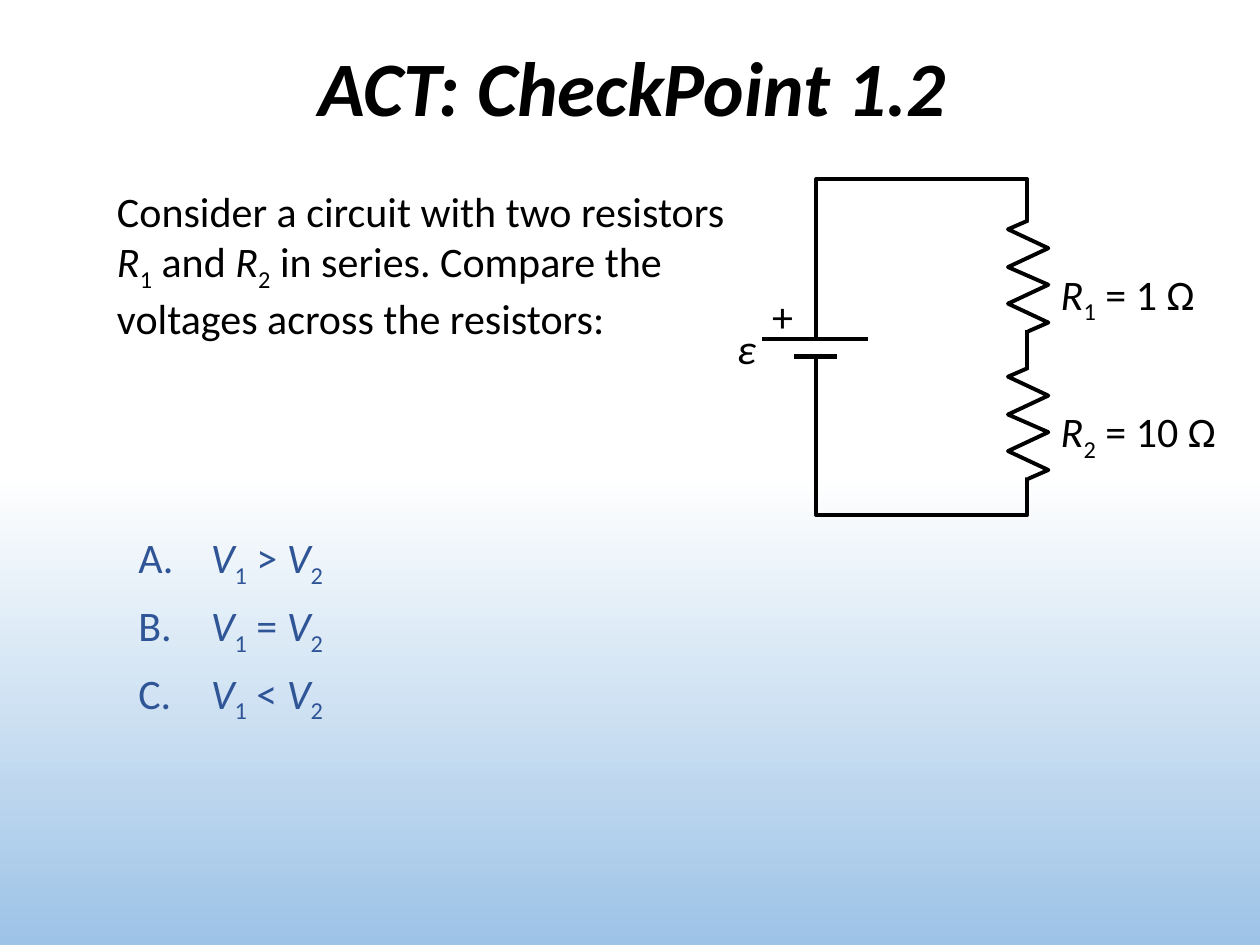
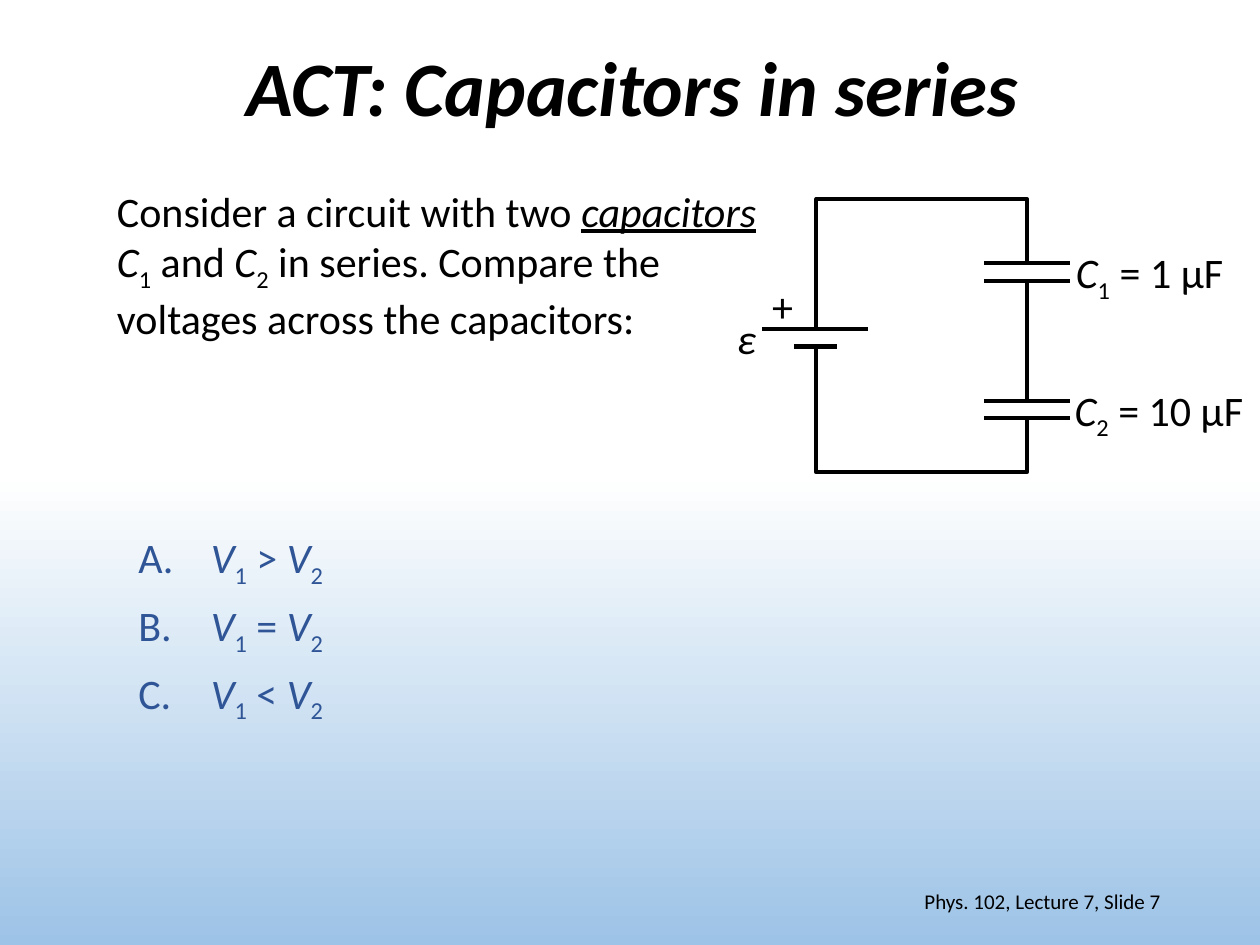
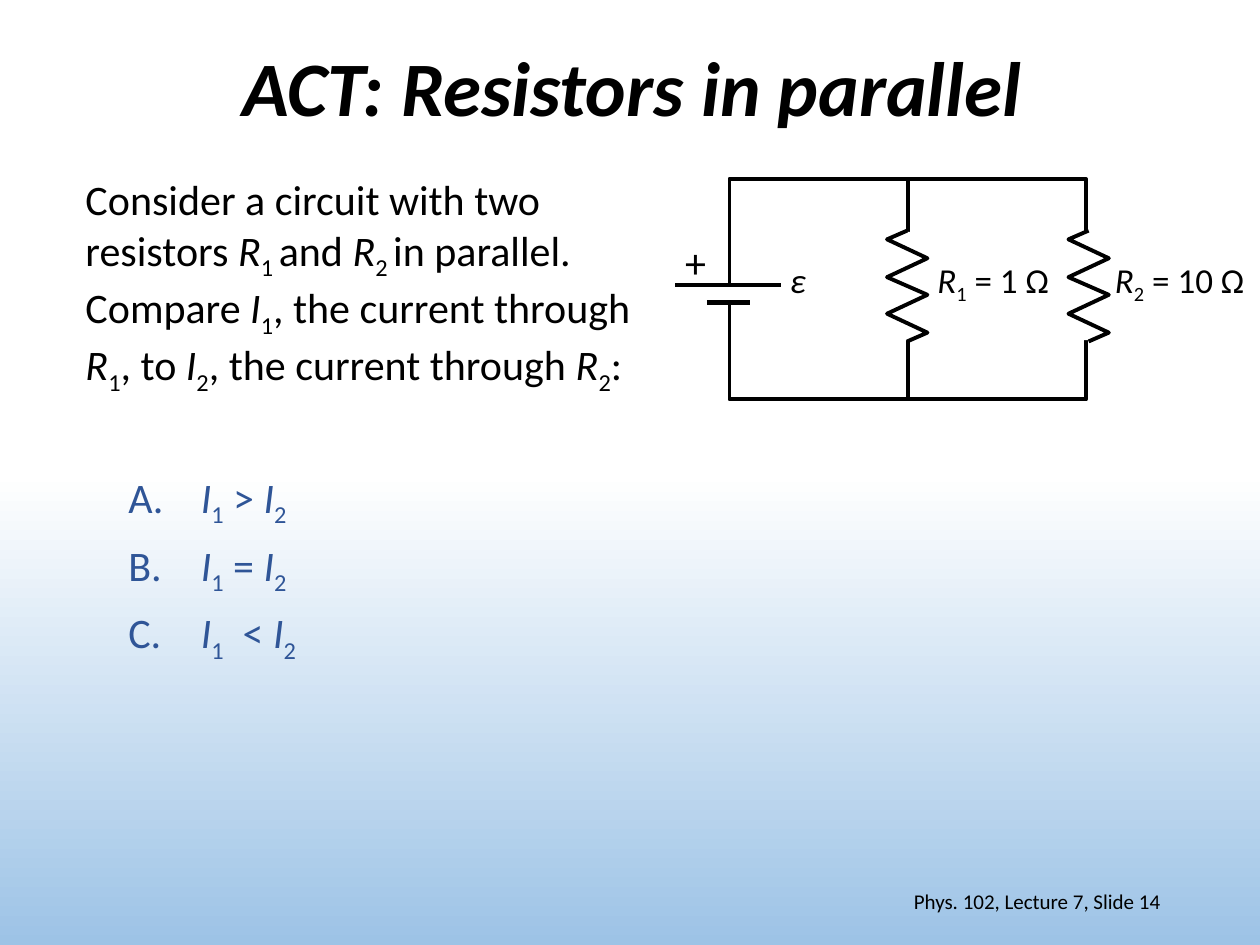
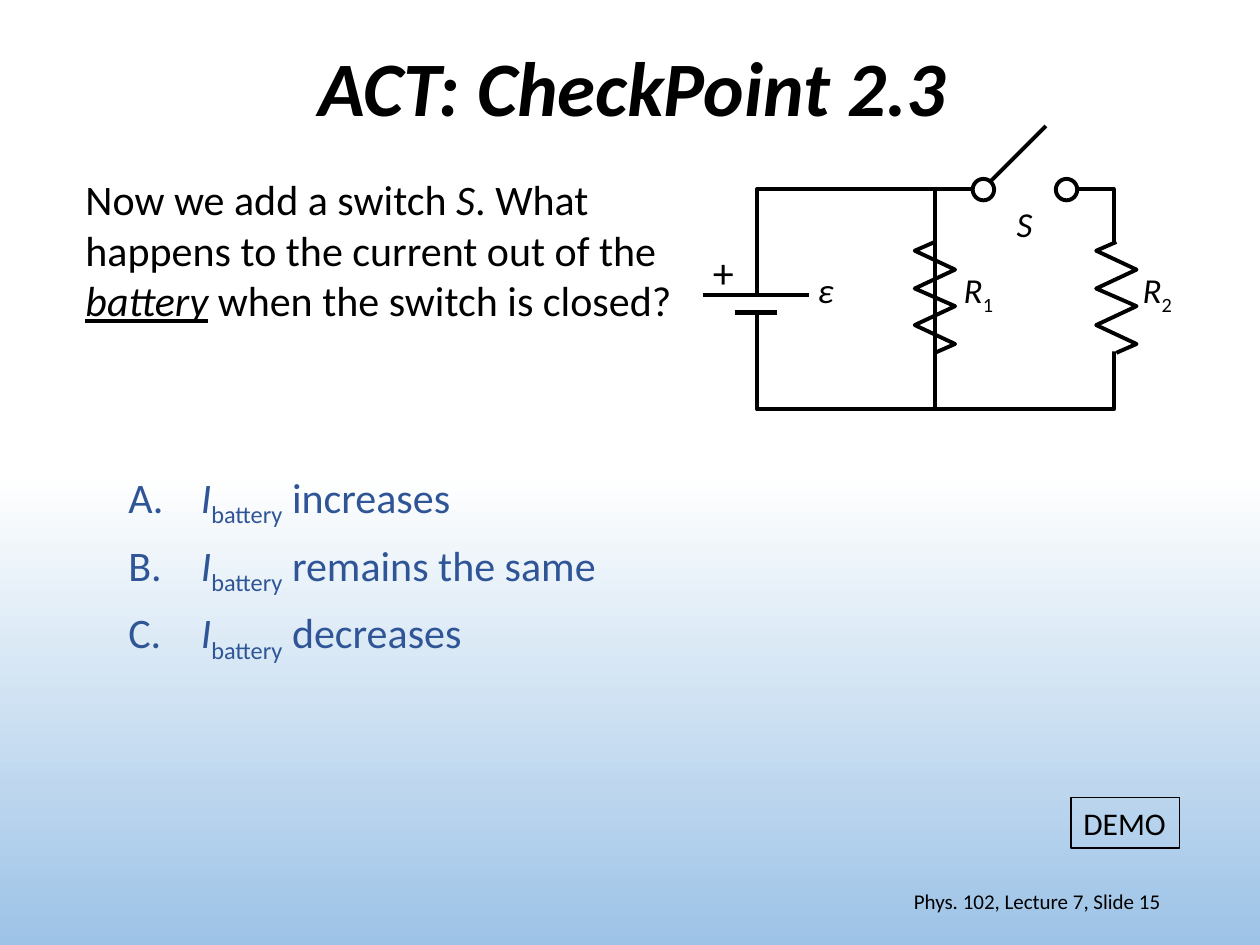
from pptx import Presentation
from pptx import util as u
from pptx.dml.color import RGBColor
from pptx.enum import shapes, text
from pptx.oxml import ns
from lxml import etree

PX = 9144  # EMU per px, 100 px to the inch
FONT = "Calibri"
BLACK = RGBColor(0, 0, 0)
WHITE = RGBColor(255, 255, 255)
SKY = RGBColor(0x9D, 0xC3, 0xE6)
ANSWER_BLUE = RGBColor(0x2F, 0x55, 0x97)

WIRE = 2.25
RESISTOR_HEIGHT = 88
RESISTOR_REACH = 16
RESISTOR_TWELFTHS = (0, 1, 3, 5, 7, 9, 11, 12)


class CircuitDeck:
    """Holds the shared style and the slide being drawn."""

    def __init__(self):
        self.deck = Presentation()
        self.deck.slide_width = 1000 * PX
        self.deck.slide_height = 750 * PX
        self.page = None
        fill = self.deck.slide_master.background.fill
        fill.gradient()
        fill.gradient_angle = 270
        for stop, position, color in zip(fill.gradient_stops, (0.5, 1), (WHITE, SKY)):
            stop.position = position
            stop.color.rgb = color

    def new_page(self, title):
        self.page = self.deck.slides.add_slide(self.deck.slide_layouts[6])
        box = self.text(71, 0, 862, 145, ["/" + title], 44,
                        align=text.PP_ALIGN.CENTER, middle=True)
        para = box.text_frame.paragraphs[0]
        para.line_spacing = 0.9
        para.runs[0].font.bold = True

    # Text
    def add_spans(self, para, markup, size, color):
        """Parts split by |: / is italic, ! italic underlined, _ subscript."""
        for part in markup.split("|"):
            mark = part[0] if part[0] in "/!_" else ""
            span = para.add_run()
            span.text = part[len(mark):]
            font = span.font
            font.name, font.size = FONT, u.Pt(size)
            font.color.rgb = color
            if mark == "_":
                font._element.set("baseline", "-25000")
            elif mark:
                font.italic = True
                font.underline = True if mark == "!" else None

    def text(self, x, y, width, height, lines, size=24, color=BLACK,
             align=None, middle=False, wrap=True):
        box = self.page.shapes.add_textbox(x * PX, y * PX, width * PX, height * PX)
        frame = box.text_frame
        frame.word_wrap = wrap
        if middle:
            frame.vertical_anchor = text.MSO_ANCHOR.MIDDLE
        else:
            frame.auto_size = text.MSO_AUTO_SIZE.SHAPE_TO_FIT_TEXT
        for index, markup in enumerate(lines):
            para = frame.add_paragraph() if index else frame.paragraphs[0]
            if align is not None:
                para.alignment = align
            self.add_spans(para, markup, size, color)
        return box

    def label(self, x, y, width, markup, size=24):
        return self.text(x, y, width, 50 if size == 24 else 44, [markup], size, wrap=False)

    def answers(self, x, y, width, choices):
        box = self.text(x, y, width, 148, [" |" + choice for choice in choices],
                        color=ANSWER_BLUE)
        for para in box.text_frame.paragraphs:
            para.space_after = u.Pt(6)
            props = para._p.get_or_add_pPr()
            props.set("marL", str(50 * PX))
            props.set("indent", str(-50 * PX))
            number = etree.SubElement(props, ns.qn("a:buAutoNum"))
            number.set("type", "alphaUcPeriod")

    def footer(self, number):
        self.text(706, 695, 225, 40, [f"Phys. 102, Lecture 7, Slide {number}"], 12,
                  align=text.PP_ALIGN.RIGHT, middle=True)

    # Basic drawing
    def style(self, shape, fill=None, weight=None):
        shape.shadow.inherit = False
        if fill is None:
            shape.fill.background()
        else:
            shape.fill.solid()
            shape.fill.fore_color.rgb = fill
        if weight is None:
            shape.line.fill.background()
        else:
            shape.line.color.rgb = BLACK
            shape.line.width = u.Pt(weight)

    def shape(self, kind, x, y, width, height, fill=None, weight=None):
        shape = self.page.shapes.add_shape(kind, x * PX, y * PX, width * PX, height * PX)
        self.style(shape, fill, weight)
        return shape

    def loop(self, x, y, width, height):
        self.shape(shapes.MSO_SHAPE.RECTANGLE, x, y, width, height, weight=WIRE)

    def gap(self, x, y, width, height):
        """White patch that interrupts a wire."""
        self.shape(shapes.MSO_SHAPE.RECTANGLE, x, y, width, height, fill=WHITE)

    def wire(self, x1, y1, x2, y2, weight=WIRE):
        line = self.page.shapes.add_connector(
            shapes.MSO_CONNECTOR.STRAIGHT, x1 * PX, y1 * PX, x2 * PX, y2 * PX)
        line.line.color.rgb = BLACK
        line.line.width = u.Pt(weight)
        etree.SubElement(line._element.spPr, ns.qn("a:effectLst"))

    # Circuit parts
    def battery(self, x, y):
        self.gap(x, y, 99, 16)
        self.wire(x + 7, y + 1, x + 91, y + 1)
        self.wire(x + 32, y + 15, x + 66, y + 15, weight=3)
        self.label(x + 5, y - 42, 37, "+")

    def capacitor(self, x, y):
        self.gap(x, y, 99, 16)
        for drop in (1, 15):
            self.wire(x + 16, y + drop, x + 84, y + drop)

    def resistor(self, x, y, masked=True):
        """Zigzag going down from the point x, y."""
        if masked:
            self.gap(x - 17, y + 1, 35, 86)
        last = len(RESISTOR_TWELFTHS) - 1
        points = []
        for index, twelfth in enumerate(RESISTOR_TWELFTHS):
            side = 0 if index in (0, last) else (-1) ** index
            points.append((x + side * RESISTOR_REACH,
                           y + round(RESISTOR_HEIGHT * twelfth / 12)))
        builder = self.page.shapes.build_freeform(*points[0], scale=PX)
        builder.add_line_segments(points[1:], close=False)
        self.style(builder.convert_to_shape(), weight=WIRE)

    def switch(self, x, y):
        """Open switch with the foot of its arm at x, y."""
        self.gap(x, y - 17, 67, 42)
        self.contact(x + 58, y - 8)
        self.wire(x + 50, y - 50, x, y)
        self.contact(x - 8, y - 8)

    def contact(self, x, y):
        self.shape(shapes.MSO_SHAPE.OVAL, x, y, 17, 17, fill=WHITE, weight=WIRE)

    def button(self, x, y, width, height, caption):
        box = self.shape(shapes.MSO_SHAPE.RECTANGLE, x, y, width, height, weight=0.75)
        box.text_frame.word_wrap = False
        box.text_frame.auto_size = text.MSO_AUTO_SIZE.SHAPE_TO_FIT_TEXT
        para = box.text_frame.paragraphs[0]
        para.alignment = text.PP_ALIGN.LEFT
        self.add_spans(para, caption, 18, BLACK)


def compare(symbol, signs=(" > ", " = ", " < ")):
    return [f"/{symbol}|_1|{sign}|/{symbol}|_2" for sign in signs]


def resistors_in_series(show):
    show.new_page("ACT: CheckPoint 1.2")
    show.answers(100, 417, 217, compare("V"))
    show.loop(648, 142, 167, 267)
    show.battery(598, 268)
    for top in (175, 292):
        show.resistor(816, top)
    show.label(832, 208, 129, "/R|_1| = 1 Ω")
    show.label(832, 317, 146, "/R|_2| = 10 Ω")
    show.label(575, 251, 35, "/ε")
    show.text(83, 142, 525, 131, [
        "Consider a circuit with two resistors |/R|_1| and |/R|_2"
        "| in series. Compare the voltages across the resistors:"])


def capacitors_in_series(show):
    show.new_page("ACT: Capacitors in series")
    show.footer(7)
    show.loop(648, 158, 167, 217)
    show.battery(598, 260)
    show.label(575, 243, 35, "/ε")
    for top in (208, 317):
        show.capacitor(765, top)
    show.text(83, 142, 550, 131, [
        "Consider a circuit with two |!capacitors| |/C|_1| and |/C|_2"
        "| in series. Compare the voltages across the capacitors:"])
    show.answers(100, 417, 217, compare("V"))
    show.label(844, 191, 140, "/C|_1| = 1 μF")
    show.label(843, 300, 157, "/C|_2| = 10 μF")


def resistors_in_parallel(show):
    show.new_page("ACT: Resistors in parallel")
    show.wire(721, 142, 721, 317)
    show.resistor(720, 183)
    show.label(734, 200, 111, "/R|_1| = 1 Ω", 20)
    show.loop(579, 142, 283, 175)
    show.resistor(864, 183)
    show.battery(529, 225)
    show.text(58, 133, 492, 172, [
        "Consider a circuit with two resistors |/R|_1 |and |/R|_2 "
        "|in parallel. Compare |/I|_1|, the current through |/R|_1"
        "|, to |/I|_2|, the current through |/R|_2|:"])
    show.label(875, 200, 125, "/R|_2| = 10 Ω", 20)
    show.label(617, 200, 33, "/ε", 20)
    show.answers(92, 369, 217, compare("I", (" > ", " = ", "  < ")))
    show.footer(14)


def switched_circuit(show):
    show.new_page("ACT: CheckPoint 2.3")
    show.wire(742, 150, 742, 325)
    show.resistor(742, 192, masked=False)
    show.label(755, 208, 45, "/R|_1", 20)
    show.loop(601, 150, 283, 175)
    show.resistor(886, 192)
    show.battery(551, 233)
    show.label(897, 208, 45, "/R|_2", 20)
    show.label(639, 208, 33, "/ε", 20)
    show.switch(780, 150)
    show.text(58, 133, 492, 131, [
        "Now we add a switch |/S|. What happens to the current out of the "
        "|!battery| when the switch is closed?"])
    show.answers(92, 369, 450, [
        f"/I|_battery| {change}"
        for change in ("increases", "remains the same", "decreases")])
    show.button(850, 633, 86, 40, "DEMO")
    show.label(797, 156, 33, "/S", 20)
    show.footer(15)


def main():
    show = CircuitDeck()
    resistors_in_series(show)
    capacitors_in_series(show)
    resistors_in_parallel(show)
    switched_circuit(show)
    show.deck.save("out.pptx")


if __name__ == "__main__":
    main()
